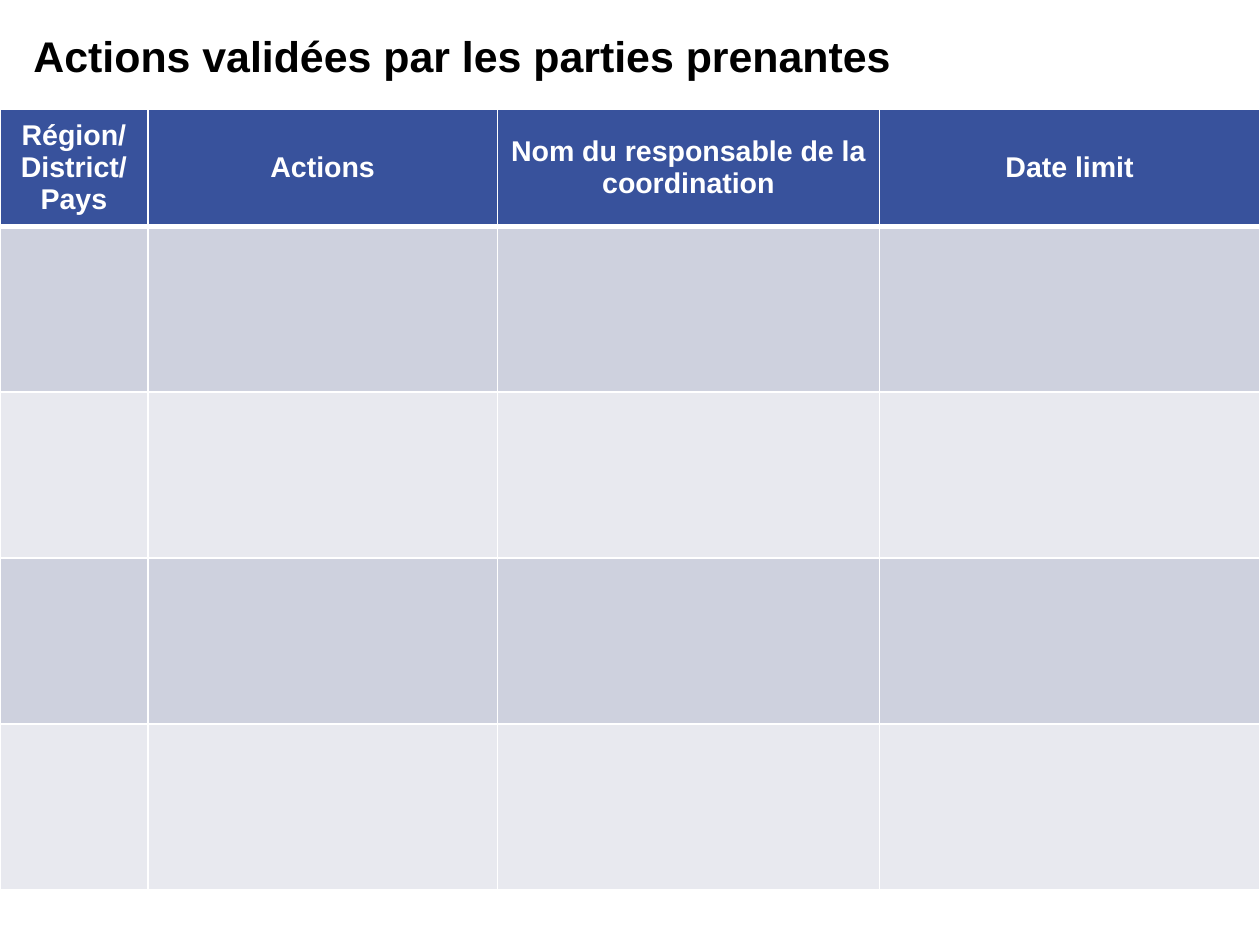
from dataclasses import dataclass

from lxml import etree
from pptx import Presentation
from pptx.dml.color import RGBColor
from pptx.enum.text import MSO_ANCHOR, PP_ALIGN
from pptx.oxml.ns import qn
from pptx.util import Inches, Pt

LEFT, CENTER = PP_ALIGN.LEFT, PP_ALIGN.CENTER
MIDDLE = MSO_ANCHOR.MIDDLE

# Content
TITLE = "Actions validées par les parties prenantes"
HEADERS = [
    "Région/District/Pays",
    "Actions",
    "Nom du responsable de la coordination",
    "Date limit",
]
COL_WIDTHS = [1.15, 2.72, 2.97, 2.96]
EMPTY_ROWS = 4
HEADER_HEIGHT, ROW_HEIGHT = 0.91, 1.29
TABLE_TOP = 0.85


@dataclass(frozen=True)
class Theme:
    font: str = "Arial"
    title_size: int = 24
    header_size: int = 16
    title: str = "000000"
    white: str = "FFFFFF"
    header: str = "38529C"
    bands: tuple = ("CED1DE", "E8E9EF")
    thin: int = 1
    thick: int = 3


THEME = Theme()


def style(p, size, color, align):
    p.alignment = align
    p.font.name = THEME.font
    p.font.size = Pt(size)
    p.font.bold = True
    p.font.color.rgb = RGBColor.from_string(color)


def set_borders(cell, top, bottom):
    tcPr = cell._tc.get_or_add_tcPr()
    widths = {"a:lnL": THEME.thin, "a:lnR": THEME.thin, "a:lnT": top, "a:lnB": bottom}
    for tag, width in widths.items():
        ln = etree.SubElement(tcPr, qn(tag), w=str(Pt(width)))
        fill = etree.SubElement(ln, qn("a:solidFill"))
        etree.SubElement(fill, qn("a:srgbClr"), val=THEME.white)


def add_title(s):
    title = s.shapes.title
    title.left, title.top = Inches(0.16), Inches(0.18)
    title.width, title.height = Inches(7.25), Inches(0.5)
    tf = title.text_frame
    tf.text = TITLE
    tf.word_wrap = True
    tf.vertical_anchor = MIDDLE
    style(tf.paragraphs[0], THEME.title_size, THEME.title, LEFT)


def add_actions_table(s):
    heights = [HEADER_HEIGHT] + [ROW_HEIGHT] * EMPTY_ROWS
    table = s.shapes.add_table(
        len(heights), len(HEADERS), 0, Inches(TABLE_TOP),
        Inches(sum(COL_WIDTHS)), Inches(sum(heights)),
    ).table
    for column, width in zip(table.columns, COL_WIDTHS):
        column.width = Inches(width)

    for i, height in enumerate(heights):
        table.rows[i].height = Inches(height)
        # The rule under the header is shared with the first empty row
        top = THEME.thick if i == 1 else THEME.thin
        bottom = THEME.thick if i == 0 else THEME.thin
        color = THEME.bands[(i - 1) % 2] if i else THEME.header
        for cell in table.rows[i].cells:
            set_borders(cell, top, bottom)
            cell.fill.solid()
            cell.fill.fore_color.rgb = RGBColor.from_string(color)

    # Header labels
    for cell, label in zip(table.rows[0].cells, HEADERS):
        cell.text = label
        cell.vertical_anchor = MIDDLE
        style(cell.text_frame.paragraphs[0], THEME.header_size, THEME.white, CENTER)


def main():
    prs = Presentation()
    prs.slide_width, prs.slide_height = Inches(9.8), Inches(7.35)
    s = prs.slides.add_slide(prs.slide_layouts.get_by_name("Title Only"))
    add_title(s)
    add_actions_table(s)
    prs.save("out.pptx")


if __name__ == "__main__":
    main()
